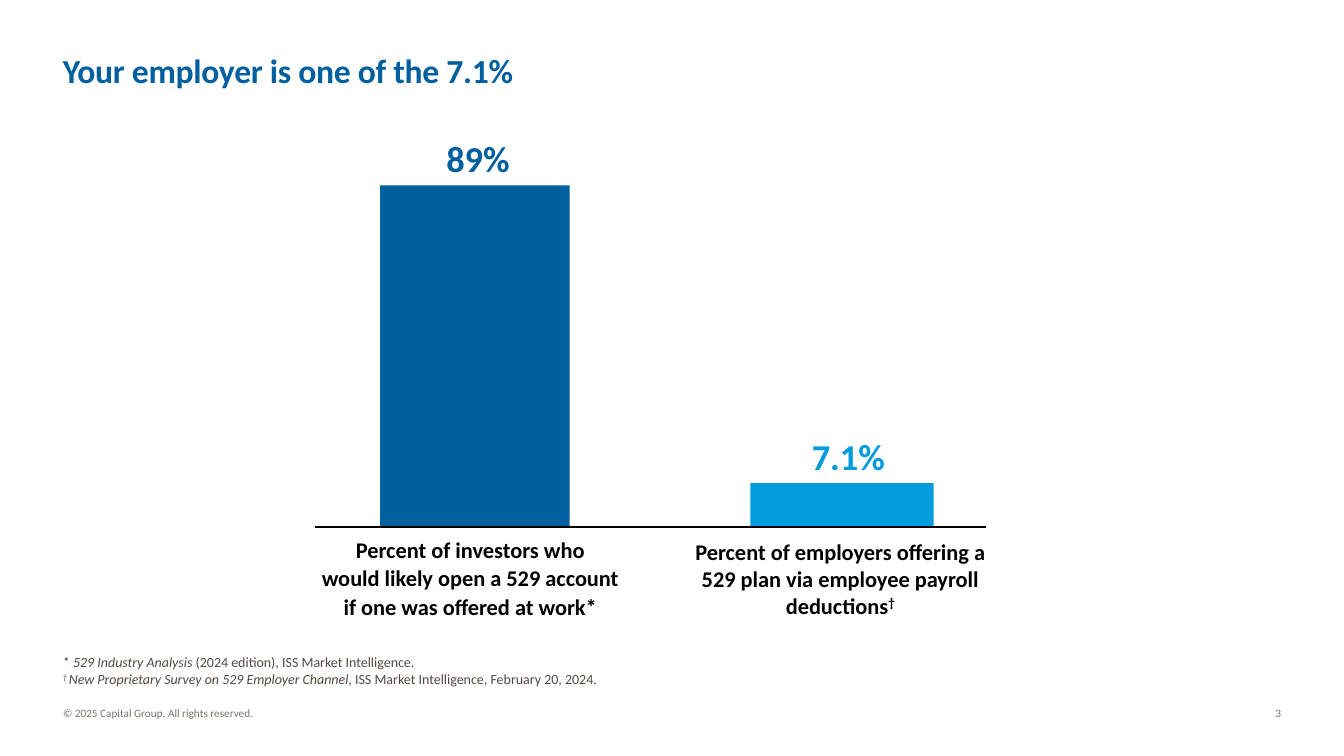
from lxml import etree
from pptx import Presentation
from pptx import util as u
from pptx.dml.color import RGBColor
from pptx.enum import shapes, text
from pptx.oxml.ns import qn

NAVY = RGBColor(0x00, 0x5F, 0x9E)
SKY = RGBColor(0x00, 0x9C, 0xDC)
BLACK = RGBColor(0x00, 0x00, 0x00)
BROWN = RGBColor(0x55, 0x47, 0x42)
GREY = RGBColor(0x7D, 0x72, 0x6D)
FONT = "Calibri"
CENTER, RIGHT = text.PP_ALIGN.CENTER, text.PP_ALIGN.RIGHT
TOP, BOTTOM = text.MSO_ANCHOR.TOP, text.MSO_ANCHOR.BOTTOM


def add_text(page, box, paras, size, color, bold=False, align=text.PP_ALIGN.LEFT,
             anchor=TOP, gap=0, line=None, tracking=None, insets=(0, 0, 0, 0)):
    """Add paragraphs, each a list of (text, italic, superscript) spans."""
    frame = page.shapes.add_textbox(*map(u.Pt, box)).text_frame
    frame.word_wrap = True
    frame.vertical_anchor = anchor
    (frame.margin_left, frame.margin_top,
     frame.margin_right, frame.margin_bottom) = map(u.Pt, insets)
    for index, spans in enumerate(paras):
        para = frame.add_paragraph() if index else frame.paragraphs[0]
        para.alignment = align
        if line:
            para.line_spacing = line
        if index and gap:
            para.space_before = u.Pt(gap)
        for words, italic, raised in spans:
            span = para.add_run()
            span.text = words
            font = span.font
            font.name, font.size = FONT, u.Pt(size)
            font.bold, font.italic = bold, italic
            font.color.rgb = color
            properties = span._r.get_or_add_rPr()
            if raised:
                properties.set("baseline", "30000")
            if tracking:
                properties.set("spc", str(round(tracking * 100)))


def plain(words):
    """Return a paragraph holding one upright span."""
    return [(words, False, False)]


def add_title(page, box, words):
    """Place the slide title at the foot of its box."""
    add_text(page, box, [plain(words)], 24, NAVY, bold=True, anchor=BOTTOM,
             line=0.95, tracking=-0.2)


def add_bar(page, box, value, value_center, color):
    """Draw a bar filling its box, with its value above."""
    left, top, width, height = box
    bar = page.shapes.add_shape(shapes.MSO_SHAPE.RECTANGLE, *map(u.Pt, box))
    bar.shadow.inherit = False
    bar.fill.solid()
    bar.fill.fore_color.rgb = color
    bar.line.fill.background()
    add_text(page, (value_center - 38, top - 35, 76, 32), [plain(value)],
             26, color, bold=True, align=CENTER)


def add_comparison(page, box):
    """Draw the two bars, their baseline and their labels."""
    left, top, width, height = box
    base = top + height
    add_bar(page, (left + 46.5, top, 135.5, height), "89%", left + 116.5, NAVY)
    add_bar(page, (left + 311, base - 31.5, 131, 31.5), "7.1%", left + 381, SKY)
    axis = page.shapes.add_connector(
        shapes.MSO_CONNECTOR.STRAIGHT, *map(u.Pt, (left, base, left + width, base)))
    axis.line.color.rgb = BLACK
    axis.line.width = u.Pt(1)
    etree.SubElement(axis._element.spPr, qn("a:effectLst"))
    investors = ["Percent of investors who", "would likely open a 529 account",
                 "if one was offered at work*"]
    add_text(page, (left - 26, base + 6.5, 274, 61), [plain(row) for row in investors],
             16, BLACK, bold=True, align=CENTER, gap=1)
    employers = plain("Percent of employers offering a 529 plan via employee "
                      "payroll deductions") + [("†", False, True)]
    add_text(page, (left + 269.5, base + 8, 211.5, 60), [employers],
             16, BLACK, bold=True, align=CENTER)


def add_footnotes(page, box):
    """Place the two source notes at the foot of their box."""
    notes = [
        [("* ", False, False), ("529 Industry Analysis", True, False),
         (" (2024 edition), ISS Market Intelligence.", False, False)],
        [("† ", True, True),
         ("New Proprietary Survey on 529 Employer Channel, ", True, False),
         ("ISS Market Intelligence, February 20, 2024.", False, False)],
    ]
    add_text(page, box, notes, 10, BROWN, anchor=BOTTOM, insets=(0, 3.6, 7.2, 3.6))


def add_footer(page, box, notice, number):
    """Place the copyright notice at left and the page number at right."""
    left, top, width, height = box
    add_text(page, (left, top, 156, height), [plain(notice)], 8, GREY, anchor=BOTTOM)
    add_text(page, (left + width - 56, top, 56, height), [plain(number)], 8, GREY,
             align=RIGHT, anchor=BOTTOM)


def main():
    """Build the slide and save it."""
    deck = Presentation()
    deck.slide_width, deck.slide_height = u.Pt(960), u.Pt(540)
    page = deck.slides.add_slide(deck.slide_layouts[6])
    left, width = 45, 870
    add_title(page, (left, 0, width, 65), "Your employer is one of the 7.1%")
    add_comparison(page, (225, 132.5, 479.5, 244))
    add_footnotes(page, (left, 444, width, 50.5))
    add_footer(page, (left, 504, width, 10),
               "© 2025 Capital Group. All rights reserved.", "3")
    deck.save("out.pptx")


if __name__ == "__main__":
    main()
